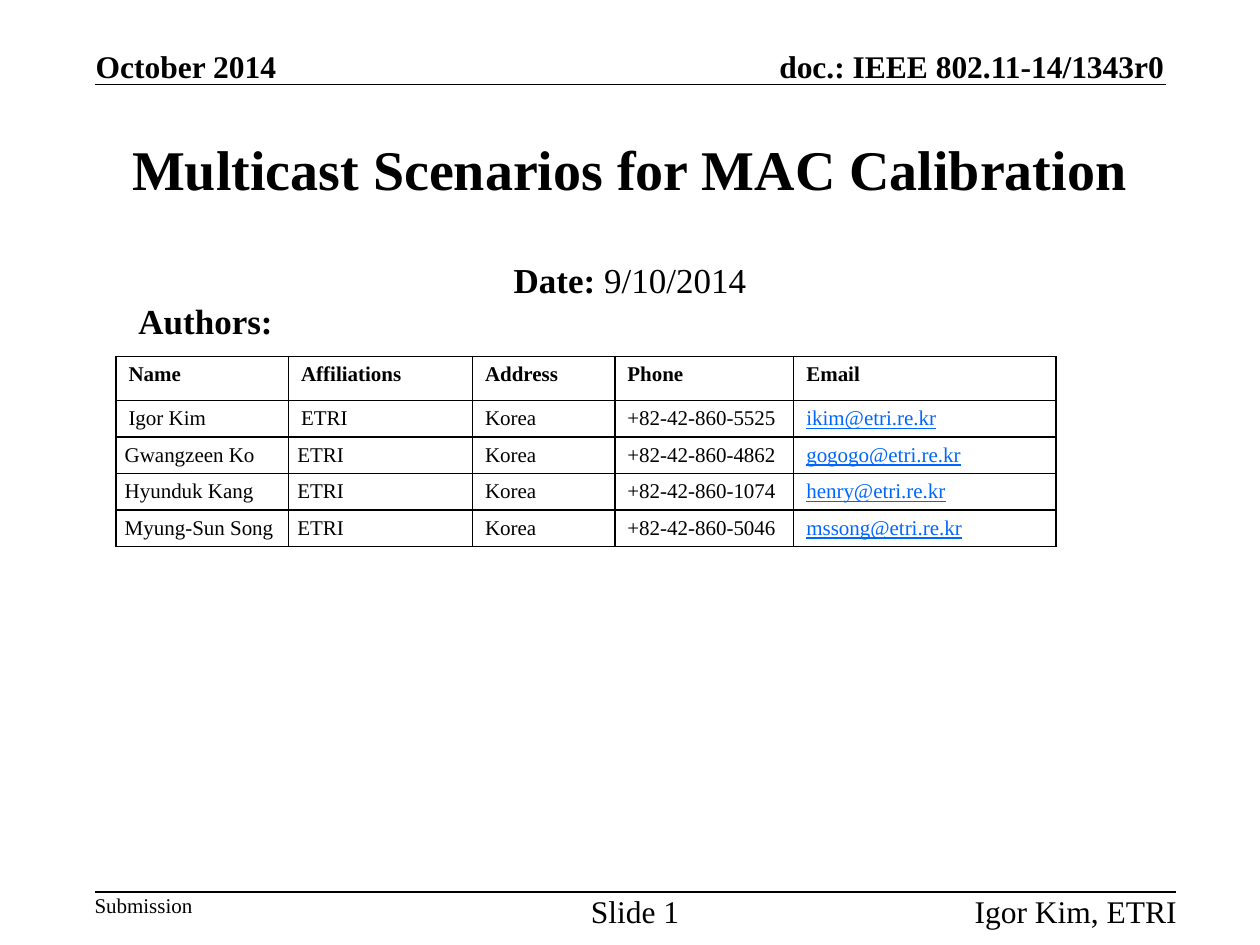
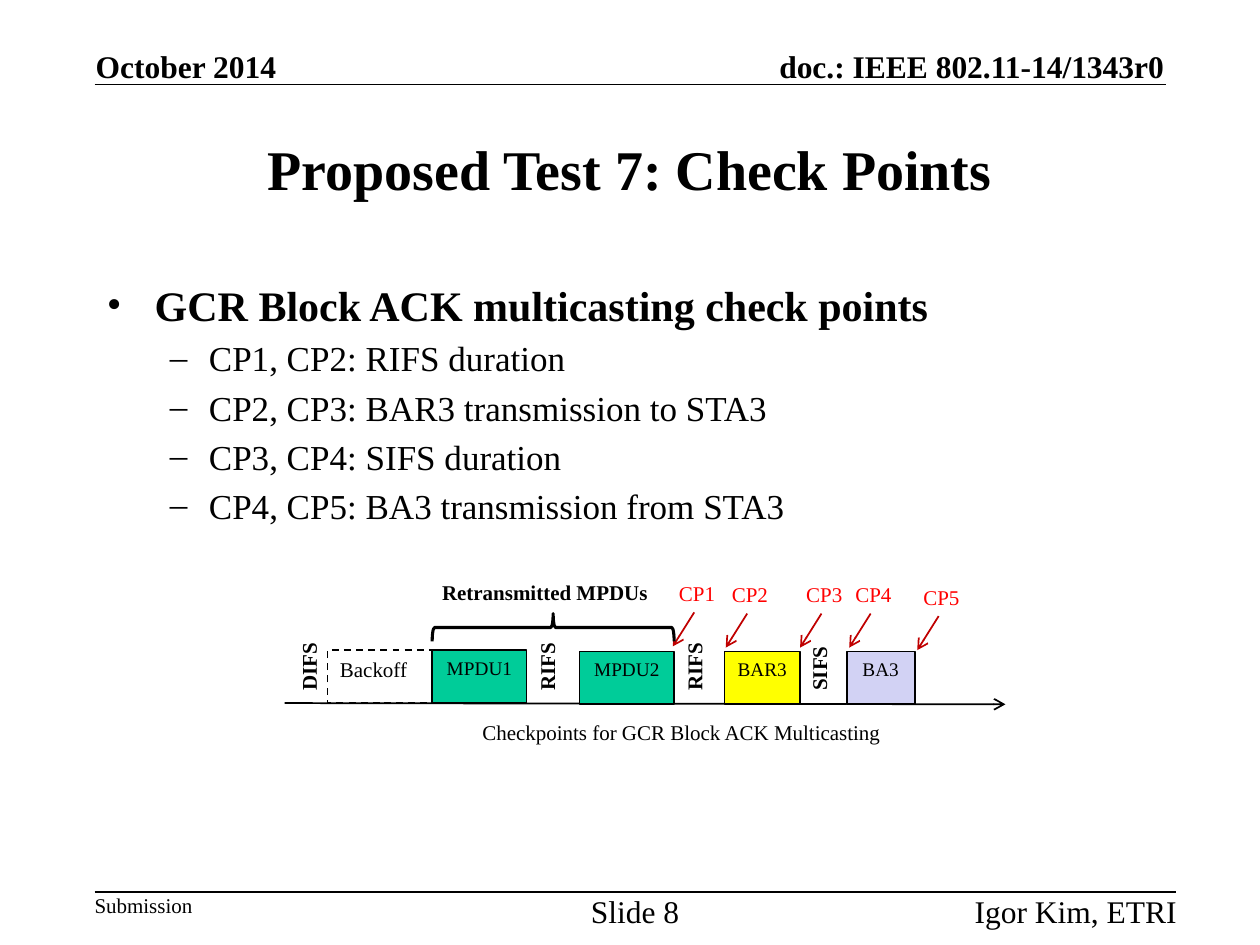
from lxml import etree
from pptx import Presentation
from pptx.dml.color import RGBColor
from pptx.enum.dml import MSO_LINE
from pptx.enum.shapes import MSO_CONNECTOR, MSO_SHAPE
from pptx.enum.text import MSO_ANCHOR, MSO_AUTO_SIZE, PP_ALIGN
from pptx.oxml.ns import qn
from pptx.util import Inches, Pt

LEFT, CENTER, RIGHT = PP_ALIGN.LEFT, PP_ALIGN.CENTER, PP_ALIGN.RIGHT
TOP, MIDDLE, BOTTOM = MSO_ANCHOR.TOP, MSO_ANCHOR.MIDDLE, MSO_ANCHOR.BOTTOM
GROW = MSO_AUTO_SIZE.SHAPE_TO_FIT_TEXT
DASH = MSO_LINE.DASH
STRAIGHT = MSO_CONNECTOR.STRAIGHT
RECT, BRACE = MSO_SHAPE.RECTANGLE, MSO_SHAPE.LEFT_BRACE

FONT = "Times New Roman"
BLACK, WHITE, LINK = "000000", "FFFFFF", "0066FF"
GREEN, YELLOW, LILAC = "00CC99", "FFFF00", "D2D2F4"
RED, DARK_RED = "FF0000", "C00000"
PAD = (0.1, 0.05)

HEADINGS = ["Name", "Affiliations", "Address", "Phone", "Email"]
AUTHORS = [
    ("Igor Kim", "5525", "ikim"),
    ("Gwangzeen Ko", "4862", "gogogo"),
    ("Hyunduk Kang", "1074", "henry"),
    ("Myung-Sun Song", "5046", "mssong"),
]
CHECK_POINTS = [
    "CP1, CP2: RIFS duration",
    "CP2, CP3: BAR3 transmission to STA3",
    "CP3, CP4: SIFS duration",
    "CP4, CP5: BA3 transmission from STA3",
]


def rgb(color):
    return RGBColor.from_string(color)


def inches(*values):
    return [Inches(v) for v in values]


def add_run(p, text, size=12, bold=False, color=BLACK, underline=False):
    r = p.add_run()
    r.text = text
    font = r.font
    font.name, font.size = FONT, Pt(size)
    font.bold, font.underline = bold, underline
    font.color.rgb = rgb(color)


def write(tf, text, align=LEFT, anchor=TOP, pad=PAD, **font):
    tf.vertical_anchor = anchor
    tf.margin_left = tf.margin_right = Inches(pad[0])
    tf.margin_top = tf.margin_bottom = Inches(pad[1])
    p = tf.paragraphs[0]
    p.alignment = align
    add_run(p, text, **font)


def add_text(shapes, box, text, wrap=False, vert=None, **fmt):
    tf = shapes.add_textbox(*inches(*box)).text_frame
    tf.word_wrap = wrap
    if not wrap:
        tf.auto_size = GROW
    if vert:
        tf._txBody.bodyPr.set("vert", vert)
    write(tf, text, **fmt)
    return tf


def add_line(shapes, start, end, color=BLACK, arrow=False):
    c = shapes.add_connector(STRAIGHT, *inches(*start, *end))
    c.line.color.rgb = rgb(color)
    c.line.width = Pt(1)
    if arrow:
        etree.SubElement(c.line._get_or_add_ln(), qn("a:tailEnd"), type="arrow")
    etree.SubElement(c._element.spPr, qn("a:effectLst"))


def add_shape(shapes, kind, box, fill=None, width=1, dash=None):
    sp = shapes.add_shape(kind, *inches(*box))
    sp.shadow.inherit = False
    if fill:
        sp.fill.solid()
        sp.fill.fore_color.rgb = rgb(fill)
    else:
        sp.fill.background()
    sp.line.color.rgb = rgb(BLACK)
    sp.line.width = Pt(width)
    if dash:
        sp.line.dash_style = dash
    return sp


def add_base_slide(prs, title, number):
    s = prs.slides.add_slide(prs.slide_layouts[6])
    shapes = s.shapes
    flush = {"pad": (0, 0)}
    head = {"size": 18, "bold": True, "anchor": BOTTOM, **flush}
    add_text(shapes, (0.76, 0.37, 1.45, 0.3), "October 2014", **head)
    add_text(shapes, (5.65, 0.37, 3.59, 0.3), "doc.: IEEE 802.11-14/1343r0",
             align=RIGHT, **head)
    add_line(shapes, (0.75, 0.67), (9.25, 0.67))
    add_line(shapes, (0.75, 7.08), (9.33, 7.08))
    add_text(shapes, (0.75, 7.08, 0.78, 0.2), "Submission", **flush)
    add_text(shapes, (4.54, 7.08, 1, 0.28), f"Slide {number}", size=18,
             align=CENTER, **flush)
    add_text(shapes, (7.34, 7.08, 2, 0.28), "Igor Kim, ETRI", size=18,
             align=RIGHT, **flush)
    add_text(shapes, (0.75, 0.75, 8.5, 1.17), title, wrap=True, size=32,
             bold=True, align=CENTER, anchor=MIDDLE)
    return s


def add_borders(cell):
    tcPr = cell._tc.get_or_add_tcPr()
    for i, side in enumerate(("lnL", "lnR", "lnT", "lnB")):
        ln = etree.Element(qn(f"a:{side}"), w=str(Pt(1)))
        fill = etree.SubElement(ln, qn("a:solidFill"))
        etree.SubElement(fill, qn("a:srgbClr"), val=BLACK)
        tcPr.insert(i, ln)


def add_author_table(s, box):
    rows = [HEADINGS] + [
        (name, "ETRI", "Korea", f"+82-42-860-{phone}", f"{user}@etri.re.kr")
        for name, phone, user in AUTHORS
    ]
    frame = s.shapes.add_table(len(rows), len(HEADINGS), *inches(*box))
    table = frame.table
    table.first_row = table.horz_banding = False
    for column, width in zip(table.columns, (1.37, 1.46, 1.13, 1.42, 2.08)):
        column.width = Inches(width)
    for i, row in enumerate(rows):
        table.rows[i].height = Inches(0.29 if i else 0.35)
        for j, text in enumerate(row):
            cell = table.cell(i, j)
            cell.fill.solid()
            cell.fill.fore_color.rgb = rgb(WHITE)
            add_borders(cell)
            is_link = i > 0 and j == 4
            cell.vertical_anchor = MIDDLE if i else TOP
            narrow = i > 1 and j < 2
            cell.margin_left = cell.margin_right = Inches(0.07 if narrow else 0.1)
            cell.margin_top = cell.margin_bottom = Inches(0.04 if i else 0.05)
            add_run(cell.text_frame.paragraphs[0], text, bold=i == 0,
                    color=LINK if is_link else BLACK, underline=is_link)


def add_bullet(p, char, margin, hang):
    pPr = p._p.get_or_add_pPr()
    pPr.set("marL", str(Inches(margin)))
    pPr.set("indent", str(-Inches(hang)))
    etree.SubElement(pPr, qn("a:buFont"), typeface=FONT)
    etree.SubElement(pPr, qn("a:buChar"), char=char)


def add_check_list(s, box):
    tf = add_text(s.shapes, box, "GCR Block ACK multicasting check points",
                  wrap=True, size=24, bold=True)
    add_bullet(tf.paragraphs[0], "•", 0.38, 0.38)
    for text in CHECK_POINTS:
        p = tf.add_paragraph()
        add_bullet(p, "–", 0.81, 0.31)
        p.space_before = Pt(4)
        add_run(p, text, size=20)


def add_timeline(s, x, y):
    shapes = s.shapes.add_group_shape().shapes
    add_text(shapes, (x + 1.47, y + 1.11, 3.4, 0.3),
             "Checkpoints for GCR Block ACK Multicasting")
    add_line(shapes, (x, y + 1.03), (x + 5.72, y + 1.04), arrow=True)

    backoff = add_shape(shapes, RECT, (x + 0.34, y + 0.61, 0.83, 0.42), dash=DASH)
    write(backoff.text_frame, "Backoff")
    frames = [
        ("MPDU1", 1.17, 0.61, 0.75, GREEN),
        ("MPDU2", 2.34, 0.62, 0.75, GREEN),
        ("BAR3", 3.49, 0.62, 0.6, YELLOW),
        ("BA3", 4.46, 0.62, 0.54, LILAC),
    ]
    for name, dx, dy, width, fill in frames:
        sp = add_shape(shapes, RECT, (x + dx, y + dy, width, 0.42), fill)
        write(sp.text_frame, name, size=11, align=CENTER)

    gaps = [("DIFS", 0.04), ("RIFS", 1.93), ("RIFS", 3.1), ("SIFS", 4.09)]
    for name, dx in gaps:
        add_text(shapes, (x + dx, y + 0.55, 0.4, 0.48), name, bold=True,
                 vert="vert270")

    points = [(3.03, 0.01), (3.45, 0.02), (4.04, 0.02), (4.43, 0.02), (4.97, 0.04)]
    for i, (dx, dy) in enumerate(points, 1):
        left, top = x + dx, y + dy
        add_text(shapes, (left, top, 0.49, 0.3), f"CP{i}", color=RED)
        add_line(shapes, (left + 0.22, top + 0.3), (left + 0.05, top + 0.57),
                 DARK_RED, arrow=True)

    brace = add_shape(shapes, BRACE, (x + 2.02, y - 0.53, 0.22, 1.92), width=1.75)
    brace.rotation = 90
    add_text(shapes, (x + 1.15, y, 1.85, 0.3), "Retransmitted MPDUs", bold=True)


def build_title_slide(prs):
    s = add_base_slide(prs, "Multicast Scenarios for MAC Calibration", 1)
    label = {"wrap": True, "size": 20, "bold": True}
    tf = add_text(s.shapes, (0.75, 2, 8.5, 0.42), "Date:", align=CENTER, **label)
    add_run(tf.paragraphs[0], " 9/10/2014", size=20)
    add_text(s.shapes, (1, 2.33, 1.58, 0.42), "Authors:", **label)
    add_author_table(s, (0.92, 2.83, 7.46, 1.51))


def build_check_point_slide(prs):
    s = add_base_slide(prs, "Proposed Test 7: Check Points", 8)
    add_check_list(s, (0.75, 2.17, 8.5, 4.5))
    add_timeline(s, 2.26, 4.55)


def main():
    prs = Presentation()
    prs.slide_width, prs.slide_height = inches(10, 7.5)
    build_title_slide(prs)
    build_check_point_slide(prs)
    prs.save("out.pptx")


if __name__ == "__main__":
    main()
